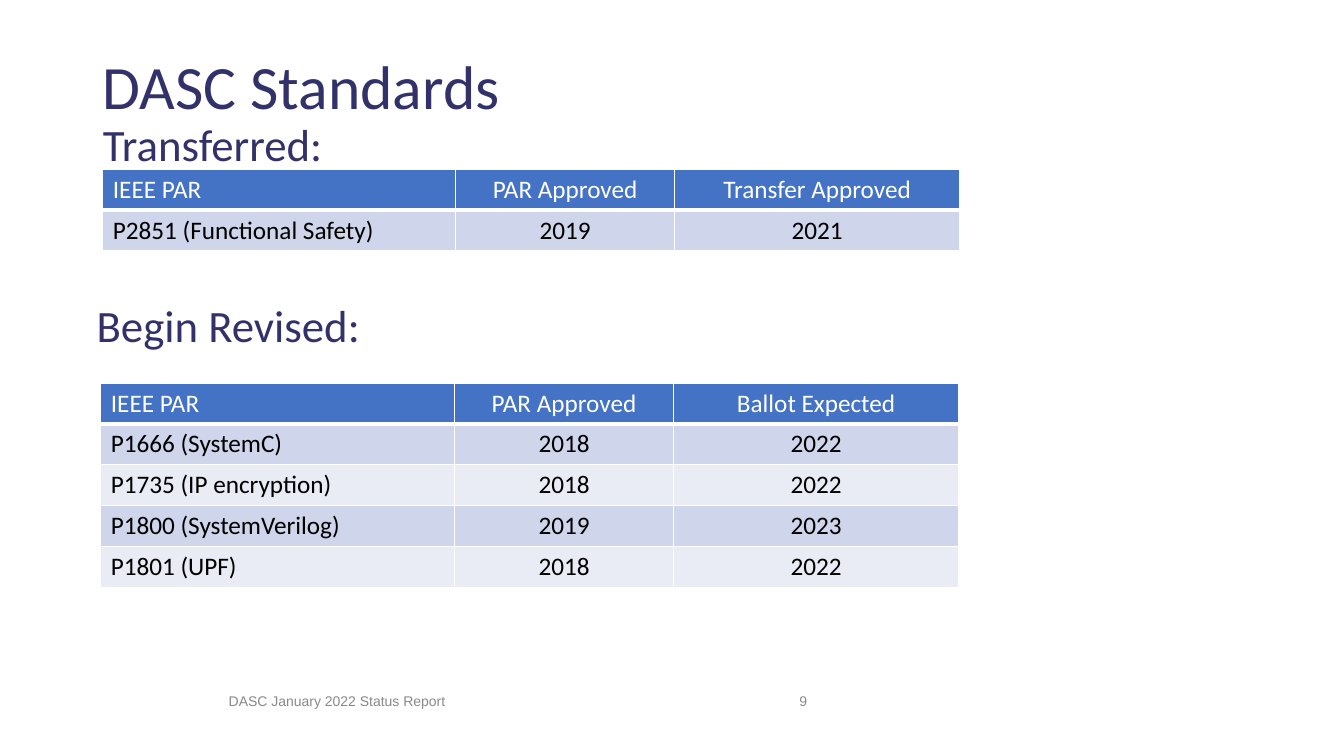
from lxml.etree import SubElement
from pptx import Presentation
from pptx.dml.color import RGBColor
from pptx.enum.text import MSO_ANCHOR, MSO_AUTO_SIZE, PP_ALIGN
from pptx.oxml.ns import qn
from pptx.util import Inches, Pt

NAVY, WHITE, BLACK, GRAY = "32316A", "FFFFFF", "000000", "898989"
HEADER_BLUE = "4472C4"
BANDS = ("CFD5EA", "E9EBF5")


def color(value):
    return RGBColor.from_string(value)


def format_font(font, size, value, name="Calibri"):
    formats = {"name": name, "size": Pt(size), "bold": False}
    for attribute, setting in formats.items():
        setattr(font, attribute, setting)
    font.color.rgb = color(value)


def format_frame(frame):
    formats = {
        "word_wrap": True,
        "auto_size": MSO_AUTO_SIZE.NONE,
        "vertical_anchor": MSO_ANCHOR.MIDDLE,
    }
    for attribute, setting in formats.items():
        setattr(frame, attribute, setting)


def add_title(slide, lines, left, top, width, height):
    title = slide.shapes.title
    title.left, title.top = Inches(left), Inches(top)
    title.width, title.height = Inches(width), Inches(height)
    format_frame(title.text_frame)
    paragraph = title.text_frame.paragraphs[0]
    paragraph.alignment = PP_ALIGN.LEFT
    paragraph.line_spacing = 0.9
    for index, (text, size) in enumerate(lines):
        if index:
            paragraph.add_line_break()
        run = paragraph.add_run()
        run.text = text
        format_font(run.font, size, NAVY)


def add_text(slide, text, box, size, value, name="Calibri", spacing=1.0):
    shape = slide.shapes.add_textbox(*map(Inches, box))
    format_frame(shape.text_frame)
    paragraph = shape.text_frame.paragraphs[0]
    paragraph.line_spacing = spacing
    run = paragraph.add_run()
    run.text = text
    format_font(run.font, size, value, name)


def add_borders(cell, top, bottom):
    properties = cell._tc.get_or_add_tcPr()
    for side, width in {"L": 1, "R": 1, "T": top, "B": bottom}.items():
        line = SubElement(properties, qn(f"a:ln{side}"), w=str(Pt(width)))
        fill = SubElement(line, qn("a:solidFill"))
        SubElement(fill, qn("a:srgbClr"), val=WHITE)


def format_cell(cell, text, row, column, header_rule):
    header = row == 0
    add_borders(cell, header_rule if row == 1 else 1, header_rule if header else 1)
    cell.fill.solid()
    cell.fill.fore_color.rgb = color(HEADER_BLUE if header else BANDS[(row - 1) % 2])
    cell.vertical_anchor = MSO_ANCHOR.BOTTOM if header else MSO_ANCHOR.TOP
    paragraph = cell.text_frame.paragraphs[0]
    paragraph.alignment = PP_ALIGN.CENTER if column else PP_ALIGN.LEFT
    run = paragraph.add_run()
    run.text = text
    format_font(run.font, 18, WHITE if header else BLACK)


def add_standards_table(slide, rows, left, top, widths, row_height):
    frame = slide.shapes.add_table(
        len(rows), len(widths), Inches(left), Inches(top),
        Inches(sum(widths)), Inches(row_height * len(rows)),
    )
    table = frame.table
    for column, width in zip(table.columns, widths):
        column.width = Inches(width)
    for row, values in enumerate(rows):
        table.rows[row].height = Inches(row_height)
        for column, text in enumerate(values):
            format_cell(table.cell(row, column), text, row, column, 3)


def main():
    presentation = Presentation()
    presentation.slide_width = Inches(13.33)
    presentation.slide_height = Inches(7.5)
    slide = presentation.slides.add_slide(presentation.slide_layouts[5])

    add_title(slide, [("DASC Standards", 44), ("Transferred:", 32)], 0.92, 0.4, 11.5, 1.45)
    transferred = [
        ("IEEE PAR", "PAR Approved", "Transfer Approved"),
        ("P2851 (Functional Safety)", "2019", "2021"),
    ]
    add_standards_table(slide, transferred, 1.02, 1.68, (3.5, 2.17, 2.83), 0.405)

    add_text(slide, "9", (7.83, 6.75, 0.75, 0.4), 10, GRAY, "Arial")
    add_text(slide, "DASC January 2022 Status Report", (2.17, 6.75, 3.42, 0.4), 10, GRAY, "Arial")

    add_text(slide, "Begin Revised:", (0.86, 2.53, 11.52, 1.45), 32, NAVY, spacing=0.9)
    revised = [
        ("IEEE PAR", "PAR Approved", "Ballot Expected"),
        ("P1666 (SystemC)", "2018", "2022"),
        ("P1735 (IP encryption)", "2018", "2022"),
        ("P1800 (SystemVerilog)", "2019", "2023"),
        ("P1801 (UPF)", "2018", "2022"),
    ]
    add_standards_table(slide, revised, 1, 3.8, (3.51, 2.17, 2.83), 0.405)

    presentation.save("out.pptx")


if __name__ == "__main__":
    main()
